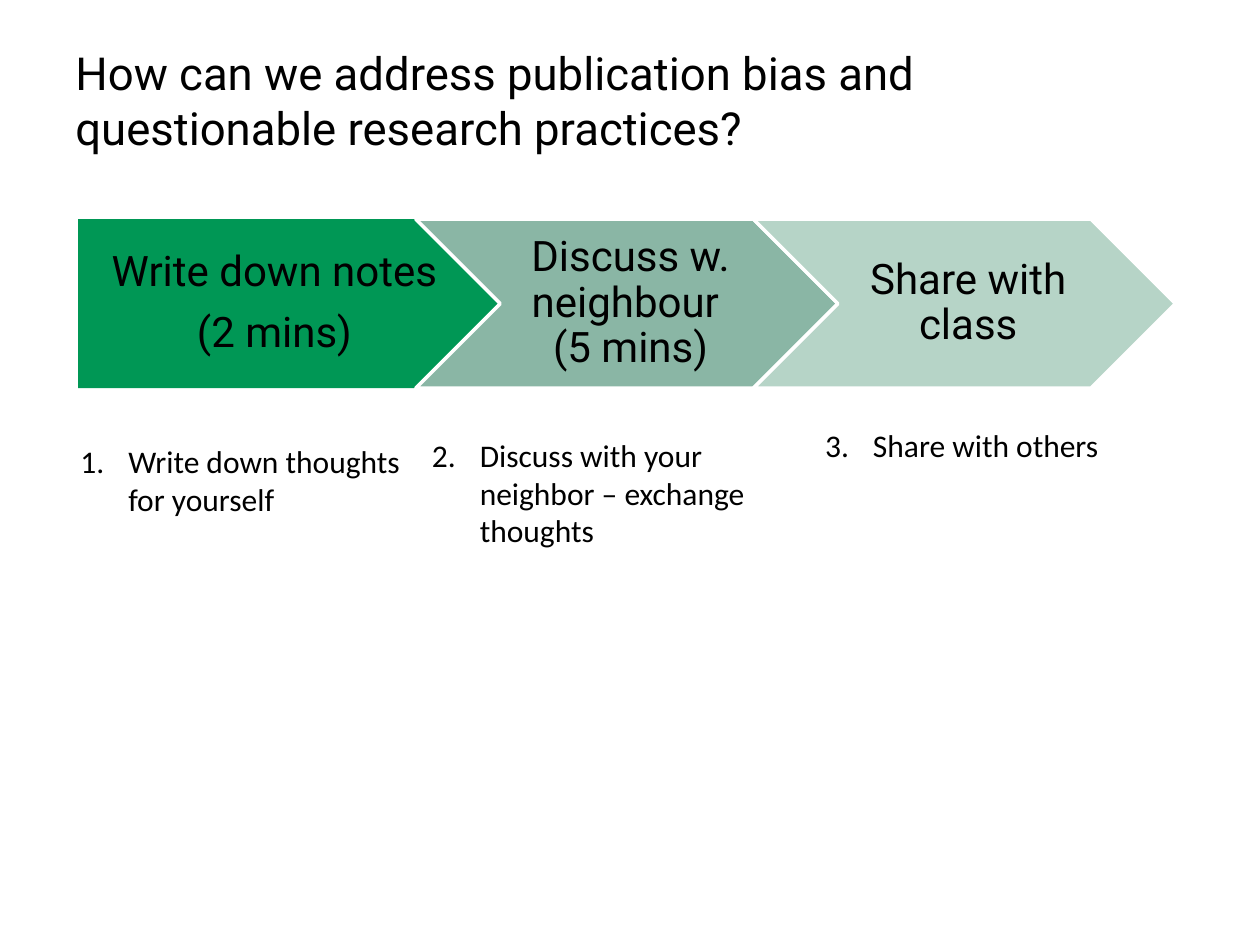
from dataclasses import dataclass

from lxml import etree
from pptx import Presentation
from pptx.dml.color import RGBColor
from pptx.enum.shapes import MSO_SHAPE
from pptx.enum.text import MSO_ANCHOR, MSO_AUTO_SIZE, PP_ALIGN
from pptx.oxml.ns import qn
from pptx.util import Inches, Pt

PENTAGON, CHEVRON = MSO_SHAPE.PENTAGON, MSO_SHAPE.CHEVRON
CENTER, MIDDLE = PP_ALIGN.CENTER, MSO_ANCHOR.MIDDLE
GROW = MSO_AUTO_SIZE.SHAPE_TO_FIT_TEXT


@dataclass(frozen=True)
class Theme:
    text: str = "000000"
    divider: str = "FFFFFF"
    step_fills: tuple = ("009755", "8AB6A5", "B6D4C7")
    heading_font: str = "Roboto"
    body_font: str = "Calibri"
    title_size: int = 26
    step_size: int = 24
    note_size: int = 18
    divider_width: int = 2


THEME = Theme()

TITLE = ["How can we address publication bias and", "questionable research practices?"]
TITLE_BOX = (0.5, 0.31, 7.02, 0.98)

# Paragraphs of each step in the arrow band
STEPS = [
    ["Write down notes", "(2 mins)"],
    ["Discuss w. neighbour \n(5 mins)"],
    ["Share with class"],
]

# Numbered notes below the band: text, then left, top, width, height
NOTES = [
    ("Write down thoughts\nfor yourself", (0.54, 3.46, 2.76, 0.71)),
    ("Discuss with your \nneighbor – exchange \nthoughts", (3.33, 3.41, 2.77, 1.01)),
    ("Share with others", (6.45, 3.33, 2.39, 0.4)),
]

BAND_LEFT, BAND_TOP = 0.62, 1.74
STEP_WIDTH = 3.35
STEP_HEIGHT = 0.4 * STEP_WIDTH
STEP_PITCH = 0.8 * STEP_WIDTH
NUMBER_INDENT = 0.38


def write(frame, paragraphs, font, size):
    """Fill the frame with one paragraph per entry and format the runs."""
    for index, content in enumerate(paragraphs):
        paragraph = frame.paragraphs[0] if index == 0 else frame.add_paragraph()
        paragraph.text = content
        for run in paragraph.runs:
            run.font.name = font
            run.font.size = Pt(size)
            run.font.color.rgb = RGBColor.from_string(THEME.text)


def add_text(slide, box, paragraphs, font, size):
    frame = slide.shapes.add_textbox(*map(Inches, box)).text_frame
    frame.word_wrap = False
    frame.auto_size = GROW
    write(frame, paragraphs, font, size)
    return frame


def number(paragraph, start):
    """Give the paragraph an automatic number with a hanging indent."""
    properties = paragraph._p.get_or_add_pPr()
    indent = Inches(NUMBER_INDENT)
    properties.set("marL", str(indent))
    properties.set("indent", str(-indent))
    etree.SubElement(properties, qn("a:buFont"), typeface="+mj-lt")
    etree.SubElement(properties, qn("a:buAutoNum"), type="arabicPeriod", startAt=str(start))


def add_step(slide, index, paragraphs):
    first = index == 0
    box = (BAND_LEFT + index * STEP_PITCH, BAND_TOP, STEP_WIDTH, STEP_HEIGHT)
    step = slide.shapes.add_shape(PENTAGON if first else CHEVRON, *map(Inches, box))
    step.shadow.inherit = False
    step.fill.solid()
    step.fill.fore_color.rgb = RGBColor.from_string(THEME.step_fills[index])
    if first:
        step.line.fill.background()
    else:
        step.line.color.rgb = RGBColor.from_string(THEME.divider)
        step.line.width = Pt(THEME.divider_width)

    frame = step.text_frame
    frame.word_wrap = True
    frame.vertical_anchor = MIDDLE
    frame.margin_left = Inches(0.14 if first else 0.1)
    frame.margin_right = Inches(0.04)
    frame.margin_top = frame.margin_bottom = Inches(0.07)
    write(frame, paragraphs, THEME.heading_font, THEME.step_size)
    for paragraph in frame.paragraphs:
        paragraph.alignment = CENTER
        paragraph.line_spacing = 0.9
        paragraph.space_after = Pt(9)


def main():
    deck = Presentation()
    deck.slide_width, deck.slide_height = Inches(10), Inches(7.5)
    slide = deck.slides.add_slide(deck.slide_layouts[6])

    add_text(slide, TITLE_BOX, TITLE, THEME.heading_font, THEME.title_size)
    for index, paragraphs in enumerate(STEPS):
        add_step(slide, index, paragraphs)
    for position, (note, box) in enumerate(NOTES, start=1):
        frame = add_text(slide, box, [note], THEME.body_font, THEME.note_size)
        number(frame.paragraphs[0], position)

    deck.save("out.pptx")


if __name__ == "__main__":
    main()
